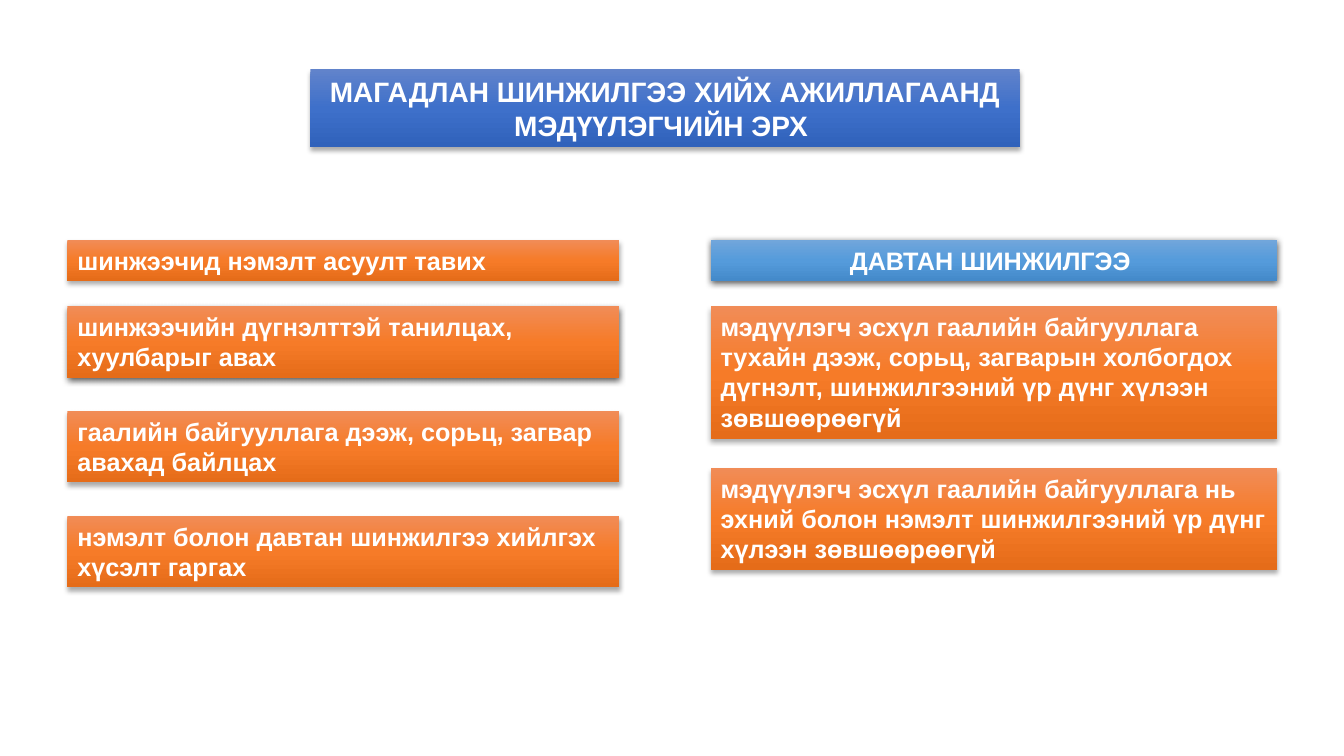
from copy import deepcopy

from lxml import etree
from pptx import Presentation
from pptx.enum import shapes, text
from pptx.dml.color import RGBColor
from pptx.oxml.ns import qn
from pptx.util import Cm, Pt

HUES = {
    "royal": ["6183CB", "3E70CA", "3062BB"],
    "orange": ["F18C57", "F67B28", "E56C19"],
    "sky": ["71A6DB", "559BDB", "448ACA"],
    "text": "FFFFFF",
    "shade": "000000",
}
# opacity in percent, blur and distance in points
SHADES = {"soft": (32, 3.5, 2.2), "deep": (63, 4.5, 1.5)}

TITLE = "МАГАДЛАН ШИНЖИЛГЭЭ ХИЙХ АЖИЛЛАГААНД МЭДҮҮЛЭГЧИЙН ЭРХ "
# column: left, width, then boxes of top, lines, hue, shade, text
COLUMNS = [
    (1.7, 13.91, [
        (6.05, 1, "orange", "soft", "шинжээчид нэмэлт асуулт тавих"),
        (7.72, 2, "orange", "deep",
         "шинжээчийн дүгнэлттэй танилцах, хуулбарыг авах"),
        (10.36, 2, "orange", "soft",
         "гаалийн байгууллага дээж, сорьц, загвар авахад байлцах"),
        (13, 2, "orange", "soft",
         "нэмэлт болон давтан шинжилгээ хийлгэх хүсэлт гаргах"),
    ]),
    (17.91, 14.27, [
        (6.05, 1, "sky", "deep", "ДАВТАН ШИНЖИЛГЭЭ "),
        (7.72, 4, "orange", "soft",
         "мэдүүлэгч эсхүл гаалийн байгууллага тухайн дээж, сорьц, загварын "
         "холбогдох дүгнэлт, шинжилгээний үр дүнг хүлээн зөвшөөрөөгүй"),
        (11.79, 3, "orange", "soft",
         "мэдүүлэгч эсхүл гаалийн байгууллага нь эхний болон нэмэлт "
         "шинжилгээний үр дүнг хүлээн зөвшөөрөөгүй"),
    ]),
]
PAD, LINE = 0.26, 0.77


def paint(box, hue):
    """Fill the box from top to bottom with the three colours of a hue."""
    fill = box.fill
    fill.gradient()
    fill.gradient_angle = 270
    first = box._element.spPr.find(".//" + qn("a:gs"))
    first.addnext(deepcopy(first))
    for stop, place, tint in zip(fill.gradient_stops, (0, 0.5, 1), HUES[hue]):
        stop.position = place
        stop.color.rgb = RGBColor.from_string(tint)
    box.line.fill.background()


def shade(box, kind):
    """Drop a shadow straight down from the box."""
    alpha, blur, dist = SHADES[kind]
    box.shadow.inherit = False
    effects = box._element.spPr.find(qn("a:effectLst"))
    outer = etree.SubElement(
        effects, qn("a:outerShdw"), blurRad=str(Pt(blur)), dist=str(Pt(dist)),
        dir="5400000", algn="ctr", rotWithShape="0")
    color = etree.SubElement(outer, qn("a:srgbClr"), val=HUES["shade"])
    etree.SubElement(color, qn("a:alpha"), val=str(alpha * 1000))


def add_box(slide, area, hue, kind, words, size=18):
    box = slide.shapes.add_shape(
        shapes.MSO_SHAPE.RECTANGLE, *(Cm(n) for n in area))
    paint(box, hue)
    shade(box, kind)
    frame = box.text_frame
    layout = {"word_wrap": True, "vertical_anchor": text.MSO_ANCHOR.TOP,
              "auto_size": text.MSO_AUTO_SIZE.SHAPE_TO_FIT_TEXT}
    for name, value in layout.items():
        setattr(frame, name, value)
    para = frame.paragraphs[0]
    sides = text.PP_ALIGN
    para.alignment = sides.LEFT if hue == "orange" else sides.CENTER
    run = para.add_run()
    run.text = words
    for name, value in {"name": "Arial", "size": Pt(size), "bold": True}.items():
        setattr(run.font, name, value)
    run.font.color.rgb = RGBColor.from_string(HUES["text"])


def main():
    deck = Presentation()
    deck.slide_width, deck.slide_height = Cm(33.87), Cm(19.05)
    slide = deck.slides.add_slide(deck.slide_layouts[6])
    add_box(slide, (7.82, 1.75, 17.88, 1.96), "royal", "soft", TITLE, 20)
    for left, width, boxes in COLUMNS:
        for top, lines, hue, kind, words in boxes:
            area = (left, top, width, PAD + LINE * lines)
            add_box(slide, area, hue, kind, words)
    deck.save("out.pptx")


if __name__ == "__main__":
    main()
